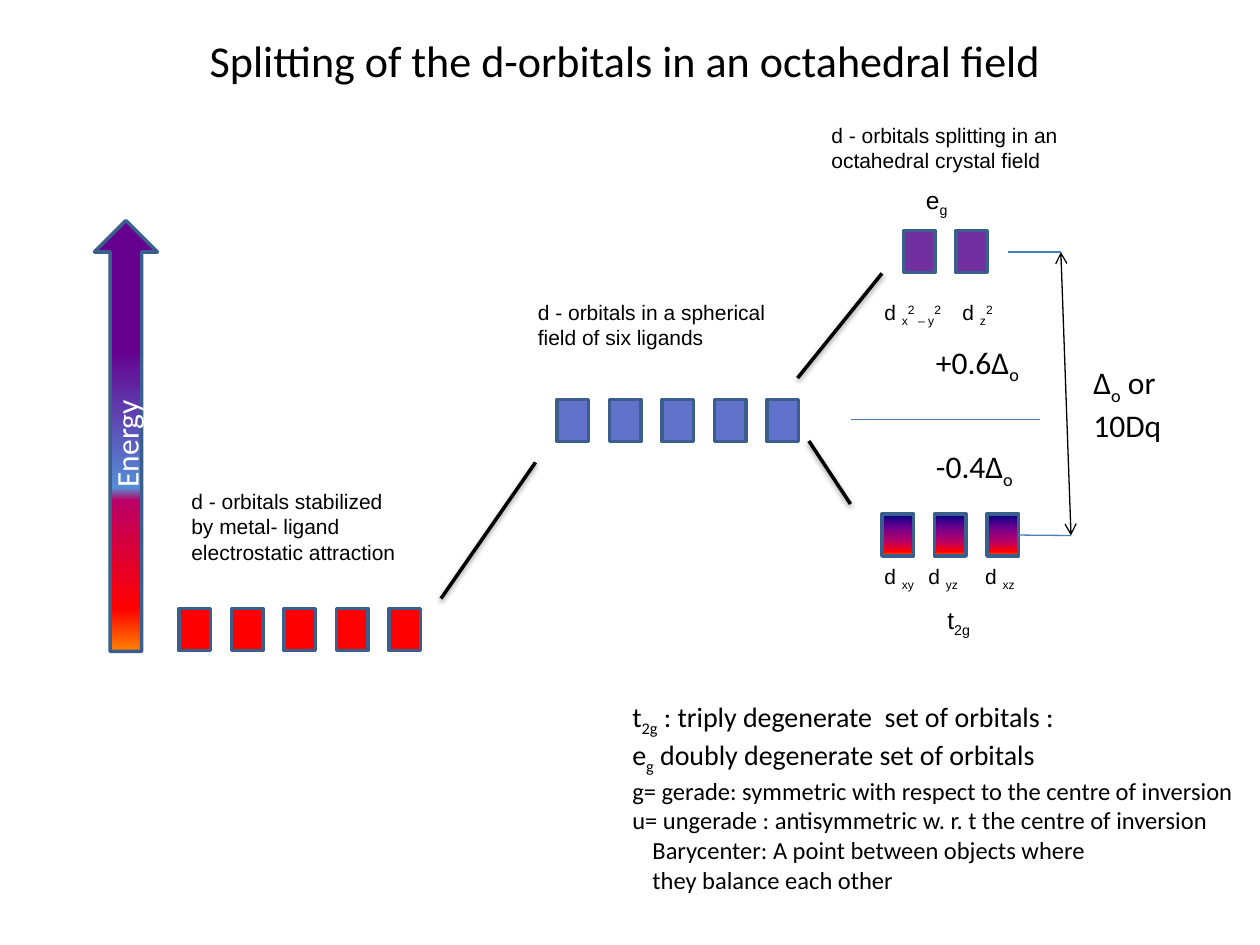
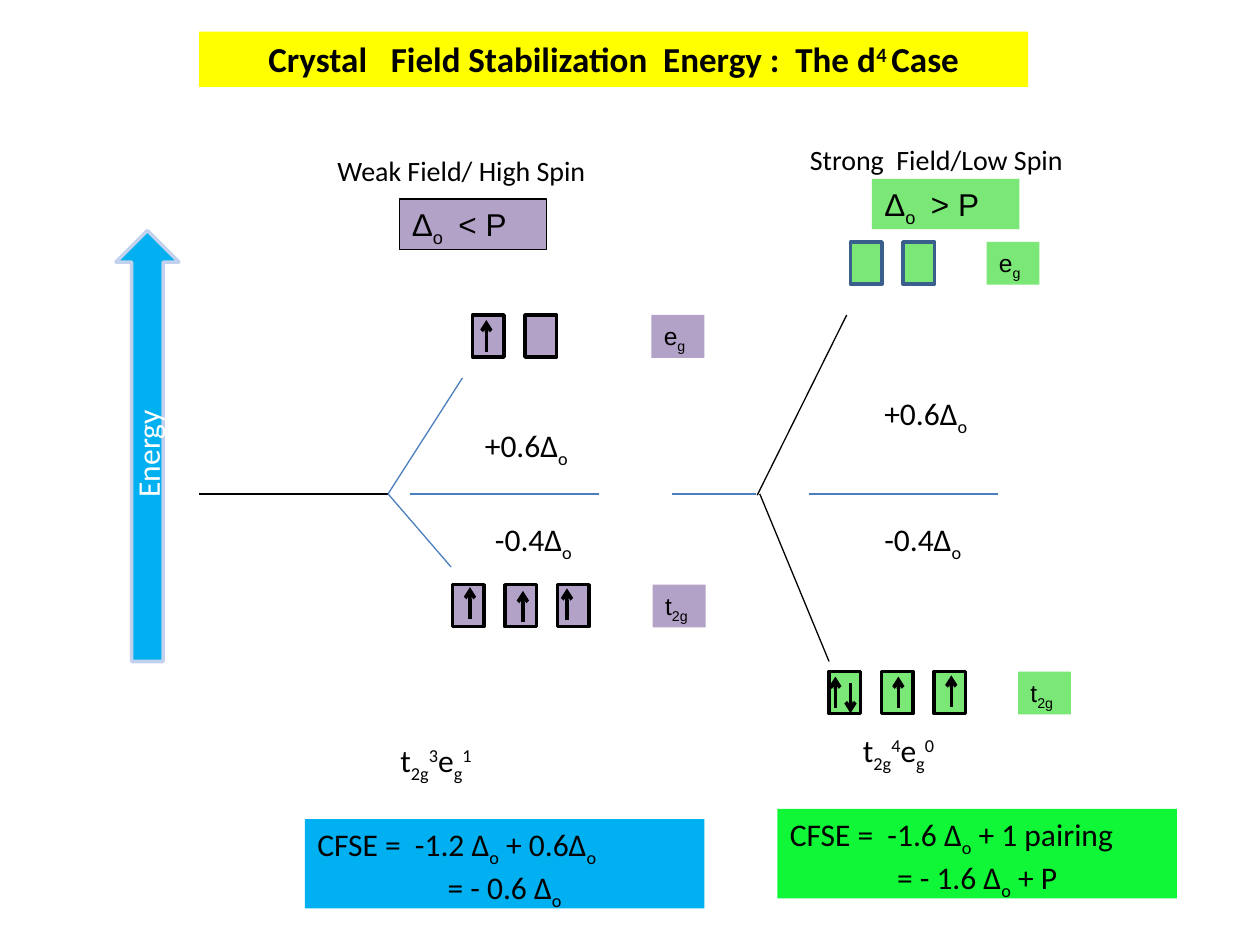
from collections import namedtuple

from lxml.etree import SubElement
from pptx import Presentation
from pptx.dml.color import RGBColor
from pptx.enum.shapes import MSO_CONNECTOR, MSO_SHAPE
from pptx.enum.text import MSO_ANCHOR, MSO_AUTO_SIZE, PP_ALIGN
from pptx.oxml.ns import qn
from pptx.util import Inches, Pt

Translucent = namedtuple("Translucent", "color opacity")

BLACK = RGBColor(0x00, 0x00, 0x00)
WHITE = RGBColor(0xFF, 0xFF, 0xFF)
RED = RGBColor(0xFF, 0x00, 0x00)
YELLOW = RGBColor(0xFF, 0xFF, 0x00)
PERIWINKLE = RGBColor(0x60, 0x72, 0xCA)
PURPLE = RGBColor(0x70, 0x30, 0xA0)
LAVENDER = RGBColor(0xB3, 0xA2, 0xC7)
SKY = RGBColor(0x00, 0xB0, 0xF0)
PALE_BLUE = RGBColor(0xC2, 0xD1, 0xED)
BRIGHT_GREEN = RGBColor(0x0F, 0xF7, 0x36)
OUTLINE_BLUE = RGBColor(0x3A, 0x5F, 0x8C)
LINE_BLUE = RGBColor(0x4B, 0x7E, 0xBC)
GREEN = Translucent(RGBColor(0x35, 0xDB, 0x2D), 65)

WARM_STOPS = [
    (65, RGBColor(0xBA, 0x00, 0x66)),
    (90, RED),
    (100, RGBColor(0xFF, 0x82, 0x00)),
]
VIOLET_STOP = (30, RGBColor(0x66, 0x00, 0x8F))
ORBITAL_GRADIENT = [(0, RGBColor(0x00, 0x00, 0x82)), VIOLET_STOP] + WARM_STOPS
ENERGY_GRADIENT = [VIOLET_STOP, (62, RGBColor(0x55, 0x8E, 0xD5))] + WARM_STOPS

ORBITAL_WIDTH = 0.25
ORBITAL_HEIGHT = 1 / 3
ORBITAL_STEP = 5 / 12
SPIN_LENGTH = 0.25
BASELINES = {"_": "-25000", "^": "30000"}


def set_fill(shape, fill):
    """Fill with a colour, a Translucent colour or a list of gradient stops."""
    if fill is None:
        shape.fill.background()
    elif isinstance(fill, list):
        shape.fill.gradient()
        shape.fill.gradient_angle = 270
        stops = shape._element.spPr.find(".//" + qn("a:gsLst"))
        for stop in list(stops):
            stops.remove(stop)
        for position, color in fill:
            stop = SubElement(stops, qn("a:gs"), pos=str(position * 1000))
            SubElement(stop, qn("a:srgbClr"), val=str(color))
    else:
        shape.fill.solid()
        if isinstance(fill, Translucent):
            shape.fill.fore_color.rgb = fill.color
            color = shape._element.spPr.find(".//" + qn("a:srgbClr"))
            SubElement(color, qn("a:alpha"), val=str(fill.opacity * 1000))
        else:
            shape.fill.fore_color.rgb = fill


def set_line(shape, color, width):
    if color is None:
        shape.line.fill.background()
    else:
        shape.line.color.rgb = color
        shape.line.width = Pt(width)


def add_paragraph(shape, text, size=18, font="Calibri", color=BLACK, bold=False,
                  align=PP_ALIGN.LEFT, tabs=(), line_spacing=None):
    """Add text whose parts are split by |; _ starts a subscript, ^ a superscript."""
    frame = shape.text_frame
    paragraph = frame.add_paragraph() if frame.text else frame.paragraphs[0]
    paragraph.alignment = align
    if line_spacing:
        paragraph.line_spacing = line_spacing
    if tabs:
        tab_list = SubElement(paragraph._p.get_or_add_pPr(), qn("a:tabLst"))
        for position in tabs:
            SubElement(tab_list, qn("a:tab"), pos=str(Inches(position)), algn="l")
    for part in text.split("|"):
        baseline = BASELINES.get(part[:1])
        run = paragraph.add_run()
        run.text = part[1:] if baseline else part
        run.font.size = Pt(size)
        run.font.name = font
        run.font.bold = bold
        run.font.color.rgb = color
        if baseline:
            run._r.get_or_add_rPr().set("baseline", baseline)


def add_preset(slide, preset, left, top, width, height, fill, line=None, line_width=2):
    shape = slide.shapes.add_shape(
        preset, Inches(left), Inches(top), Inches(width), Inches(height))
    shape.shadow.inherit = False
    set_fill(shape, fill)
    set_line(shape, line, line_width)
    return shape


def fit_to_text(shape):
    frame = shape.text_frame
    frame.word_wrap = True
    frame.vertical_anchor = MSO_ANCHOR.TOP
    frame.auto_size = MSO_AUTO_SIZE.SHAPE_TO_FIT_TEXT


def add_text(slide, text, left, top, width, height, **text_format):
    box = slide.shapes.add_textbox(
        Inches(left), Inches(top), Inches(width), Inches(height))
    fit_to_text(box)
    for line in text.split("\n"):
        add_paragraph(box, line, **text_format)
    return box


def add_filled_text(slide, text, left, top, width, height, fill, line=None, **text_format):
    box = add_preset(slide, MSO_SHAPE.RECTANGLE, left, top, width, height, fill, line, 0.75)
    fit_to_text(box)
    add_paragraph(box, text, **text_format)
    return box


def add_line(slide, start, end, color=BLACK, width=0.75, head=False, tail=False,
             shadow=False):
    points = [Inches(value) for value in (*start, *end)]
    connector = slide.shapes.add_connector(MSO_CONNECTOR.STRAIGHT, *points)
    set_line(connector, color, width)
    properties = connector._element.spPr
    outline = properties.find(qn("a:ln"))
    if head:
        SubElement(outline, qn("a:headEnd"), type="arrow")
    if tail:
        SubElement(outline, qn("a:tailEnd"), type="arrow")
    effects = SubElement(properties, qn("a:effectLst"))
    if shadow:
        outer = SubElement(effects, qn("a:outerShdw"), blurRad=str(Pt(3.1)),
                           dist=str(Pt(1.6)), dir="5400000", rotWithShape="0")
        color_element = SubElement(outer, qn("a:srgbClr"), val=str(BLACK))
        SubElement(color_element, qn("a:alpha"), val="38000")
    return connector


def add_orbitals(slide, count, left, top, fill, line=OUTLINE_BLUE):
    """Add a row of equal orbital boxes and return them."""
    return [
        add_preset(slide, MSO_SHAPE.FLOWCHART_PROCESS, left + index * ORBITAL_STEP, top,
                   ORBITAL_WIDTH, ORBITAL_HEIGHT, fill, line)
        for index in range(count)
    ]


def add_spin_up(slide, x, bottom):
    add_line(slide, (x, bottom), (x, bottom - SPIN_LENGTH), width=2, tail=True)


def add_energy_arrow(slide, left, top, fill, line):
    arrow = add_preset(slide, MSO_SHAPE.UP_ARROW, left, top, 0.5, 3.42, fill, line)
    arrow.text_frame.vertical_anchor = MSO_ANCHOR.MIDDLE
    arrow.text_frame._txBody.bodyPr.set("vert", "vert270")
    add_paragraph(arrow, "Energy", color=WHITE, align=PP_ALIGN.CENTER)


def add_energy_shift(slide, shift, left, top):
    add_text(slide, shift + "Δ|_o", left, top, 1, 0.4)


def add_titled_slide(presentation, text, left, top, width, height, fill=None,
                     anchor=MSO_ANCHOR.MIDDLE, **text_format):
    slide = presentation.slides.add_slide(presentation.slide_layouts[5])
    title = slide.shapes.title
    title.left, title.top = Inches(left), Inches(top)
    title.width, title.height = Inches(width), Inches(height)
    set_fill(title, fill)
    title.text_frame.word_wrap = True
    title.text_frame.auto_size = MSO_AUTO_SIZE.NONE
    title.text_frame.vertical_anchor = anchor
    add_paragraph(title, text, align=PP_ALIGN.CENTER, **text_format)
    return slide


def build_splitting_slide(presentation):
    slide = add_titled_slide(
        presentation, "Splitting of the d-orbitals in an octahedral field",
        1.25, 0.25, 7.42, 0.5, size=25.2, line_spacing=0.9)

    add_orbitals(slide, 5, 4.42, 3.17, PERIWINKLE)
    add_orbitals(slide, 5, 1.42, 4.83, RED)
    add_orbitals(slide, 2, 7.17, 1.83, PURPLE)
    t2g_orbitals = add_orbitals(slide, 3, 7, 4.08, ORBITAL_GRADIENT)

    for start, end in (((3.5, 4.75), (4.25, 3.67)),
                       ((6.33, 3), (7, 2.17)),
                       ((6.42, 3.5), (6.75, 4))):
        add_line(slide, start, end, width=2, shadow=True)
    add_energy_arrow(slide, 0.75, 1.75, ENERGY_GRADIENT, OUTLINE_BLUE)

    for text, left, top, width, height in (
        ("d - orbitals stabilized by metal- ligand electrostatic attraction",
         1.42, 3.83, 1.92, 0.71),
        ("d - orbitals in a spherical field of six ligands", 4.17, 2.33, 2.08, 0.5),
        ("d - orbitals splitting in an\noctahedral crystal field", 6.5, 0.92, 2.08, 0.5),
    ):
        add_text(slide, text, left, top, width, height, size=12, font="Arial")
    add_text(slide, "e|_g", 7.25, 1.42, 0.42, 0.34, size=14, font="Arial")
    add_text(slide, "t|_2g", 7.42, 4.75, 0.42, 0.34, size=14, font="Arial")
    add_text(slide, "d |_xy|\td |_yz|\td |_xz", 6.92, 4.42, 1.42, 0.3,
             size=12, font="Arial", tabs=(0.35, 0.8))
    add_text(slide, "d |_x|^2|_ – y|^2|\td |_z|^2", 6.92, 2.33, 1.17, 0.3,
             size=12, font="Arial", tabs=(0.62,))

    add_line(slide, (8, 2), (8.42, 2), LINE_BLUE)
    t2g_level = add_line(slide, (8.08, 4.25), (8.5, 4.25), LINE_BLUE)
    t2g_level.begin_connect(t2g_orbitals[-1], 3)
    add_line(slide, (8.42, 2), (8.5, 4.25), head=True, tail=True)
    add_line(slide, (6.75, 3.33), (8.25, 3.33), LINE_BLUE)
    add_text(slide, "Δ|_o| or 10Dq", 8.58, 2.83, 0.92, 0.71)
    add_energy_shift(slide, "-0.4", 7.33, 3.5)
    add_energy_shift(slide, "+0.6", 7.33, 2.67)

    notation = add_text(
        slide, "t|_2g| : triply degenerate  set of orbitals :\n"
        "e|_g| doubly degenerate set of orbitals", 4.92, 5.5, 5.08, 1.11, size=16)
    add_paragraph(notation, "g= gerade: symmetric with respect to the centre of inversion",
                  size=14)
    add_paragraph(notation, "u= ungerade : antisymmetric w. r. t the centre of inversion",
                  size=14)
    add_text(slide, "Barycenter: A point between objects where they balance each other",
             5.08, 6.58, 3.67, 0.57, size=14)


def build_d4_slide(presentation):
    slide = add_titled_slide(
        presentation, "Crystal   Field Stabilization  Energy :  The d|^4 |Case",
        1.58, 0.25, 6.58, 0.44, fill=YELLOW, anchor=MSO_ANCHOR.TOP, size=20, bold=True)
    add_energy_arrow(slide, 0.92, 1.83, SKY, PALE_BLUE)

    for count, left, top, fill, line, label, label_left in (
        (2, 3.75, 2.5, LAVENDER, BLACK, "e|_g", 5.17),
        (3, 3.59, 4.64, LAVENDER, BLACK, "t|_2g", 5.18),
        (2, 6.75, 1.92, GREEN, OUTLINE_BLUE, "e|_g", 7.83),
        (3, 6.58, 5.33, GREEN, BLACK, "t|_2g", 8.08),
    ):
        add_orbitals(slide, count, left, top, fill, line)
        add_filled_text(slide, label, label_left, top, 0.42, 0.34, fill,
                        size=14, font="Arial")

    add_text(slide, "Weak Field/ High Spin", 2.58, 1.17, 2.42, 0.37, size=16)
    add_text(slide, "Strong  Field/Low Spin", 6.33, 1.08, 2.5, 0.37, size=16)
    add_filled_text(slide, "Δ|_o|\t< P", 3.17, 1.58, 1.17, 0.4, LAVENDER, BLACK,
                    font="Arial", tabs=(0.37,))
    add_filled_text(slide, "Δ|_o|\t> P", 6.92, 1.42, 1.17, 0.4, GREEN,
                    font="Arial", tabs=(0.37,))

    for x, bottom in ((3.73, 4.91), (4.15, 4.94), (4.5, 4.92), (3.86, 2.79),
                      (6.63, 5.62), (7.13, 5.62), (7.55, 5.61)):
        add_spin_up(slide, x, bottom)
    add_line(slide, (6.75, 5.42), (6.75, 5.66), width=2, tail=True)

    for start, end, color in (
        ((1.58, 3.92), (3.08, 3.92), BLACK),
        ((3.08, 3.92), (3.67, 3), LINE_BLUE),
        ((3.08, 3.92), (3.58, 4.5), LINE_BLUE),
        ((3.25, 3.92), (4.75, 3.92), LINE_BLUE),
        ((6, 3.92), (5.33, 3.92), LINE_BLUE),
        ((6.01, 3.93), (6.72, 2.5), BLACK),
        ((6.03, 3.92), (6.58, 5.25), BLACK),
        ((6.42, 3.92), (7.92, 3.92), LINE_BLUE),
    ):
        add_line(slide, start, end, color)
    for shift, left, top in (("+0.6", 3.75, 3.33), ("-0.4", 3.83, 4.08),
                             ("+0.6", 6.92, 3.08), ("-0.4", 6.92, 4.08)):
        add_energy_shift(slide, shift, left, top)

    add_text(slide, "t|_2g|^3|e|_g|^1", 3.08, 5.83, 0.83, 0.4)
    add_text(slide, "t|_2g|^4|e|_g|^0", 6.75, 5.75, 0.83, 0.4)
    for terms, total, left, top, fill in (
        ("CFSE =  -1.2 Δ|_o| + 0.6Δ|_o", "= - 0.6 Δ|_o", 2.42, 6.5, SKY),
        ("CFSE =  -1.6 Δ|_o| + 1 pairing", "= - 1.6 Δ|_o| + P", 6.17, 6.42, BRIGHT_GREEN),
    ):
        result = add_filled_text(slide, terms, left, top, 3.17, 0.71, fill)
        add_paragraph(result, total, align=PP_ALIGN.CENTER)


def main():
    presentation = Presentation()
    presentation.slide_width, presentation.slide_height = Inches(10), Inches(7.5)
    build_splitting_slide(presentation)
    build_d4_slide(presentation)
    presentation.save("out.pptx")


if __name__ == "__main__":
    main()
